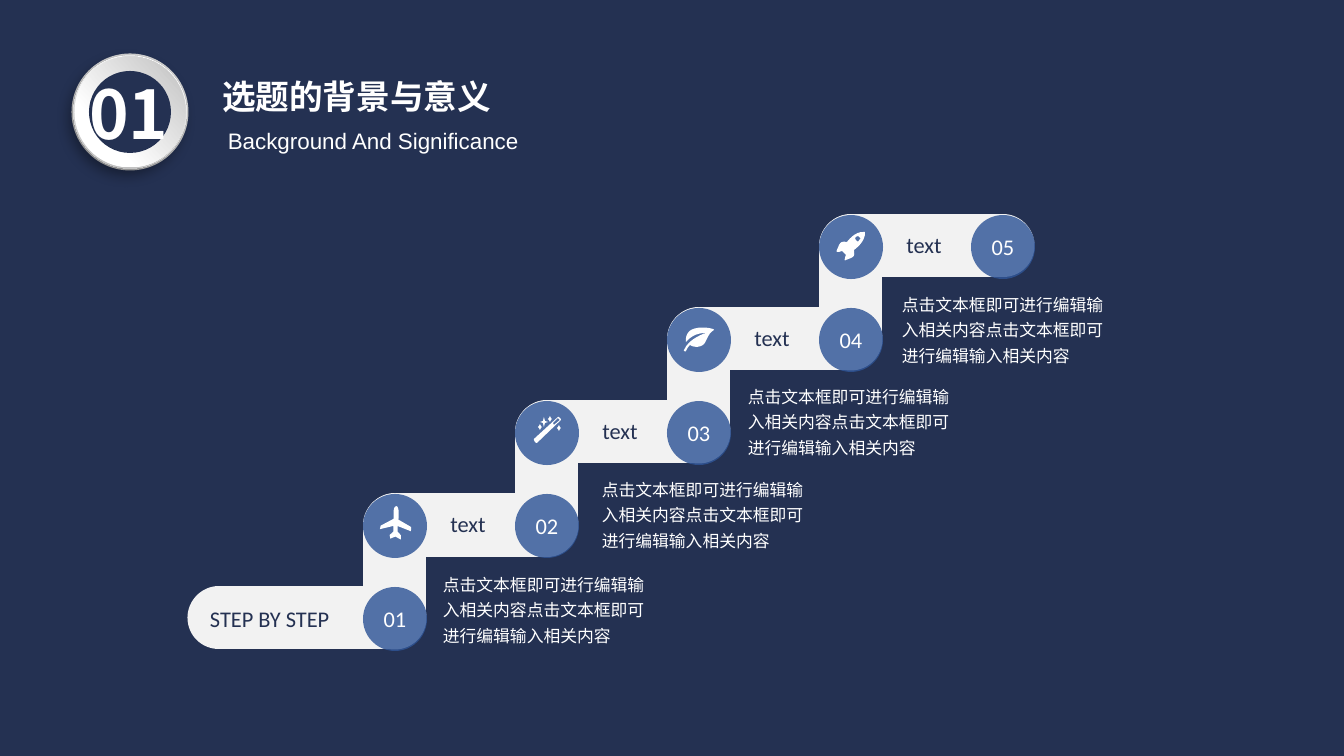
"""Build the five-step staircase slide."""
from lxml.etree import SubElement
from pptx import Presentation
from pptx.dml.color import RGBColor
from pptx.enum.shapes import MSO_CONNECTOR, MSO_SHAPE
from pptx.enum.text import MSO_ANCHOR, MSO_AUTO_SIZE, PP_ALIGN
from pptx.oxml.ns import qn
from pptx.util import Emu, Pt

PX = 914400 / 100.8
HUES = {"navy": "243152", "blue": "2F5597", "pale": "F2F2F2", "white": "FFFFFF",
        "rim": "D3D3D3", "ash": "B8B8B8", "gray": "BFBFBF", "black": "000000"}
CJK = "Noto Sans CJK SC"
BODY = "点击文本框即可进行编辑输入相关内容点击文本框即可进行编辑输入相关内容"
COUNT = 5
XS = [395 + 152 * i for i in range(COUNT)]
YS = [619 - 93 * i for i in range(COUNT)]
NOTES = [(433, 565), (592, 470), (738, 377), (892, 285)]


def px(num):
    return Emu(round(num * PX))


def hue(name):
    return RGBColor.from_string(HUES[name])


def write(frame, text, size=16, font="Calibri", color="white", bold=False,
          align=PP_ALIGN.LEFT, anchor=MSO_ANCHOR.TOP, wrap=True, space=None):
    frame.auto_size = MSO_AUTO_SIZE.NONE
    frame.word_wrap = wrap
    frame.vertical_anchor = anchor
    para = frame.paragraphs[0]
    para.alignment = align
    para.line_spacing = space
    run = para.add_run()
    run.text = text
    run.font.size = Pt(size)
    run.font.bold = bold
    run.font.color.rgb = hue(color)
    run.font.name = font
    SubElement(run.font.element if hasattr(run.font, "element") else run._r.get_or_add_rPr(),
               qn("a:ea"), typeface=font)


def star(x, y, w, h):
    return [(x - w, y), (x - 1, y - 1), (x, y - h), (x + 1, y - 1),
            (x + w, y), (x + 1, y + 1), (x, y + h), (x - 1, y + 1)]


def trace(ring):
    points = [ring[0]]
    for part in ring[1:]:
        if len(part) == 2:
            points.append(part)
            continue
        start = points[-1]
        knots = [start, part[:2], part[2:4], part[4:]]
        for step in range(1, 9):
            t = step / 8
            mix = [(1 - t) ** 3, 3 * t * (1 - t) ** 2, 3 * t * t * (1 - t), t ** 3]
            points.append(tuple(sum(m * k[axis] for m, k in zip(mix, knots)) for axis in (0, 1)))
    return [(100 * x, 100 * y) for x, y in points]


PLANE = [[(21, 32), (24, 29), (20, 15), (26, 9), (26, 9, 29, 5, 28, 4),
          (26, 2, 23, 5, 23, 5), (17, 11), (3, 7), (0, 9), (12, 16), (8, 20), (3, 20),
          (1, 23), (6, 25), (8, 31), (11, 28), (11, 23), (15, 19)]]
WAND = [[(24, 1), (25, 1), (26, 2), (27, 3), (27, 4), (26, 5), (3, 27), (2, 27),
         (1, 26), (0, 24), (0, 23)],
        [(26, 4), (24, 2), (19, 7), (20, 9)],
        star(6, 11, 2, 3), star(10, 6, 4, 5), star(16, 3, 2, 3), star(25, 12, 2, 3)]
LEAF = [[(8, 5), (2, 9, 3, 15, 3, 17), (11, 7, 23, 8, 23, 8), (23, 8, 6, 13, 1, 25),
         (0, 26, 3, 27, 3, 26), (4, 23, 7, 20, 7, 20), (10, 22, 15, 23, 20, 20),
         (24, 17, 24, 9, 31, 5), (33, 4, 17, 0, 8, 5)]]
ROCKET = [[(18, 19), (18, 19, 30, 11, 29, 1), (28, 1), (19, 0, 11, 11, 11, 11),
           (4, 10, 4, 12, 1, 19), (0, 21, 1, 21, 2, 21), (4, 21, 6, 20, 6, 20), (10, 24),
           (10, 24, 9, 26, 9, 28), (8, 29, 9, 30, 10, 29), (18, 26, 19, 26, 18, 19)],
          [(20, 9), (19, 8, 19, 7, 20, 6), (21, 5, 23, 5, 23, 6),
           (25, 7, 25, 8, 23, 9), (23, 11, 21, 11, 20, 9)]]
ICONS = [(PLANE, 382, 508, 316.2), (WAND, 534, 416, 0),
         (LEAF, 683, 325, 0), (ROCKET, 836, 231, 0)]


class Deck:
    def __init__(self):
        self.file = Presentation()
        self.file.slide_width, self.file.slide_height = px(1344), px(756)
        self.slide = self.file.slides.add_slide(self.file.slide_layouts[5])
        self.slide.background.fill.solid()
        self.slide.background.fill.fore_color.rgb = hue("navy")
        self.shapes = self.slide.shapes

    def title(self, text, x, y, w, h, **style):
        shape = self.shapes.title
        shape.left, shape.top, shape.width, shape.height = map(px, (x, y, w, h))
        write(shape.text_frame, text, **style)

    def text(self, text, x, y, w, h, **style):
        box = self.shapes.add_textbox(px(x), px(y), px(w), px(h))
        write(box.text_frame, text, **style)

    def disc(self, x, y, size, color=None, fade=None, home=None):
        home = home or self.shapes
        half = size / 2
        shape = home.add_shape(MSO_SHAPE.OVAL, px(x - half), px(y - half), px(size), px(size))
        shape.shadow.inherit = False
        shape.line.fill.background()
        if color:
            shape.fill.solid()
            shape.fill.fore_color.rgb = hue(color)
        if fade:
            tint = shape.element.spPr.find(qn("a:solidFill"))[0]
            SubElement(tint, qn("a:alpha"), val=str(fade * 1000))
        return shape

    def shine(self, size, turn, stops, home):
        shape = self.disc(130, 112, size, home=home)
        shape.fill.gradient()
        shape.fill.gradient_angle = 45
        for stop, (place, color) in zip(shape.fill.gradient_stops, stops):
            stop.position = place
            stop.color.rgb = hue(color)
        shape.rotation = turn
        return shape

    def badge(self):
        group = self.shapes.add_group_shape().shapes
        self.disc(130, 112, 117, "rim", home=group)
        back = self.shine(113, 152.3, [(.17, "white"), (.88, "ash")], group)
        glow = SubElement(back.element.spPr.find(qn("a:effectLst")), qn("a:outerShdw"),
                          blurRad=str(Pt(10)), dist=str(Pt(5)),
                          dir=str(123 * 60000), rotWithShape="0")
        tint = SubElement(glow, qn("a:srgbClr"), val=HUES["black"])
        SubElement(tint, qn("a:alpha"), val="39000")
        self.shine(111, 3, [(.29, "white"), (.98, "gray")], group)
        self.disc(130, 112, 82, "navy", home=group)

    def bar(self, x1, y1, x2, y2):
        line = self.shapes.add_connector(MSO_CONNECTOR.STRAIGHT, px(x1), px(y1), px(x2), px(y2))
        line.line.width = Pt(45)
        line.line.color.rgb = hue("pale")
        line.element.spPr.find(qn("a:ln")).set("cap", "rnd")
        SubElement(line.element.spPr, qn("a:effectLst"))

    def icon(self, rings, x, y, turn):
        first, *rest = [trace(ring) for ring in rings]
        pen = self.shapes.build_freeform(*first[0], scale=PX / 100)
        pen.add_line_segments(first[1:])
        for ring in rest:
            pen.move_to(*ring[0])
            pen.add_line_segments(ring[1:])
        shape = pen.convert_to_shape(px(x), px(y))
        shape.shadow.inherit = False
        shape.fill.solid()
        shape.fill.fore_color.rgb = hue("white")
        shape.line.fill.background()
        shape.rotation = turn


def main():
    deck = Deck()
    deck.title("选题的背景与意义", 212, 71, 444, 50, size=24, font=CJK, bold=True)
    deck.badge()
    deck.text("01", 59, 67, 140, 92, size=48, font=CJK, bold=True, align=PP_ALIGN.CENTER)
    deck.text("Background And Significance", 218, 122, 444, 37, font="Arial",
              anchor=MSO_ANCHOR.MIDDLE)
    deck.bar(219, YS[0] - 1, XS[0], YS[0] - 1)
    for x, y, right, top in zip(XS, YS, XS[1:], YS[1:]):
        deck.bar(x, y - 1, x, top - 1)
        deck.bar(x, top - 1, right, top - 1)
    for i, (x, y) in enumerate(zip(XS, YS), 1):
        disc = deck.disc(x, y, 64, "blue", fade=82)
        write(disc.text_frame, f"{i:02}", align=PP_ALIGN.CENTER,
              anchor=MSO_ANCHOR.MIDDLE, wrap=False)
    deck.text("STEP BY STEP", 200, 600, 144, 37, color="navy", wrap=False)
    for x, top, icon, note in zip(XS, YS[1:], ICONS, NOTES):
        deck.disc(x, top, 64, "blue", fade=82)
        deck.icon(*icon)
        deck.text("text", x + 45, top - 21, 56, 37, color="navy",
                  align=PP_ALIGN.CENTER, wrap=False)
        deck.text(BODY, *note, 234, 87, size=12, font=CJK, space=1.25)
    deck.file.save("out.pptx")


if __name__ == "__main__":
    main()
